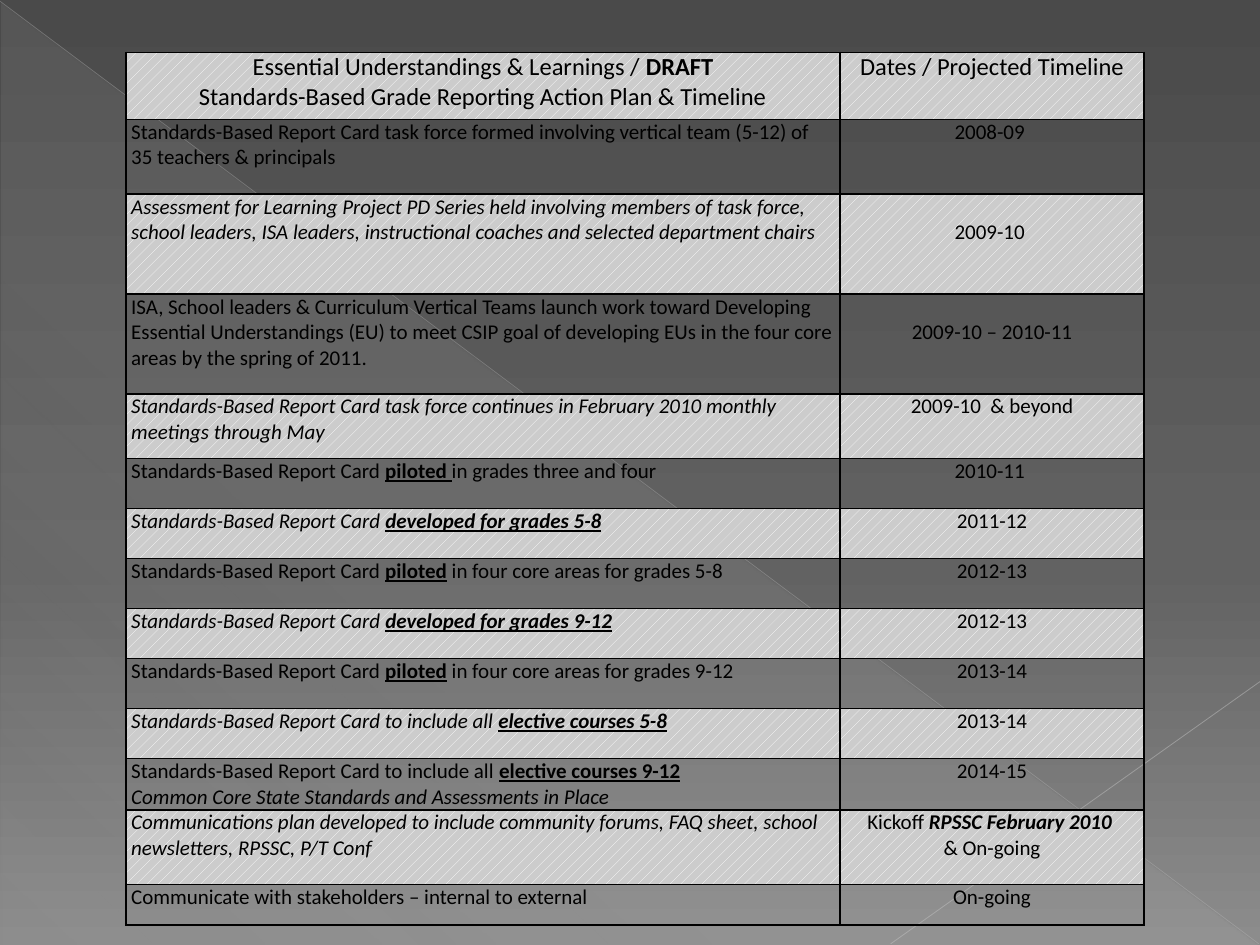
import pptx
import pptx.util
import pptx.dml.color
import pptx.enum.dml
import pptx.enum.shapes
import pptx.enum.text
import pptx.oxml
import pptx.oxml.ns
from lxml import etree

Pt = pptx.util.Pt
RGB = pptx.dml.color.RGBColor.from_string
qn = pptx.oxml.ns.qn

COLORS = {
    "ink": "000000", "hatch": "FFFFFF", "shade": "CCCCCC",
    "sky": "4A4A4A", "middle": "626262", "ground": "8C8C8C",
    "veil": "D2D2D2", "long line": "BFBFBF", "short line": "C6C6C6",
}
FONT = "Calibri"
PLAIN, UNDERLINED, SLANTED = {}, {"underline": True}, {"italic": True}

# Each row: height, paragraphs on the left, paragraphs on the right.
# Words between asterisks are emphasised.
CARD = "Standards-Based Report Card "
ROWS = [
    (38.2, ["Essential Understandings & Learnings / *DRAFT*",
            "Standards-Based Grade Reporting Action Plan & Timeline"],
     ["Dates / Projected Timeline"]),
    (42.8, [CARD + "task force formed involving vertical team (5-12) of 35 teachers & principals"],
     ["2008-09 "]),
    (57.1, ["Assessment for Learning Project PD Series held involving members of task force, "
            "school leaders, ISA leaders, instructional coaches and selected department chairs"],
     ["2009-10 "]),
    (57.1, ["ISA, School leaders & Curriculum Vertical Teams launch work toward Developing "
            "Essential Understandings (EU) to meet CSIP goal of developing EUs in the four "
            "core areas by the spring of 2011."],
     ["2009-10 – 2010-11"]),
    (36.9, [CARD + "task force continues in February 2010 monthly meetings through May"],
     ["2009-10  & beyond"]),
    (28.6, [CARD + "*piloted *in grades three and four"], ["2010-11 "]),
    (28.6, [CARD + "*developed for grades 5-8*"], ["2011-12"]),
    (28.6, [CARD + "*piloted* in four core areas for grades 5-8"], ["2012-13"]),
    (28.6, [CARD + "*developed for grades 9-12*"], ["2012-13"]),
    (28.6, [CARD + "*piloted* in four core areas for grades 9-12"], ["2013-14"]),
    (28.6, [CARD + "to include all *elective courses 5-8*"], ["2013-14"]),
    (28.6, [CARD + "to include all *elective courses 9-12*",
            "Common Core State Standards and Assessments in Place"], ["2014-15"]),
    (42.8, ["Communications plan developed to include community forums, FAQ sheet, "
            "school newsletters, RPSSC, P/T Conf"],
     ["Kickoff *RPSSC February 2010 *", "& On-going"]),
    (23, ["Communicate with stakeholders – internal to external"], ["On-going"]),
]
LOWERED_DATES = (2, 3)      # rows whose date sits one line down
MIXED_ROW = 11              # upright row whose second paragraph is italic


def set_gradient(fill, owner, stops, angle):
    """Give a fill linear stops of (position, colour, opacity)."""
    fill.gradient()
    gradient = owner.find(".//" + qn("a:gradFill"))
    for child in list(gradient):
        gradient.remove(child)
    stop_list = etree.SubElement(gradient, qn("a:gsLst"))
    for position, color, opacity in stops:
        stop = etree.SubElement(stop_list, qn("a:gs"), pos=str(position * 1000))
        add_alpha(etree.SubElement(stop, qn("a:srgbClr"), val=COLORS[color]), opacity)
    etree.SubElement(gradient, qn("a:lin"), ang=str(angle * 60000), scaled="0")


def add_alpha(color_element, opacity):
    if opacity < 100:
        etree.SubElement(color_element, qn("a:alpha"), val=str(opacity * 1000))


def add_faint_line(page, start, end, color, width, opacity):
    line = page.shapes.add_connector(
        pptx.enum.shapes.MSO_CONNECTOR.STRAIGHT, *map(Pt, start + end))
    line.line.width = Pt(width)
    line.line.color.rgb = RGB(COLORS[color])
    properties = line.element.spPr
    add_alpha(properties.find(".//" + qn("a:srgbClr")), opacity)
    etree.SubElement(properties, qn("a:effectLst"))


def add_backdrop(page, width, height):
    set_gradient(page.background.fill, page.element,
                 [(0, "sky", 100), (60, "middle", 100), (100, "ground", 100)], 90)
    veil = page.shapes.add_shape(
        pptx.enum.shapes.MSO_SHAPE.RIGHT_TRIANGLE,
        Pt(0.7), Pt(1.4), Pt(width - 1.4), Pt(height - 1.4))
    veil.shadow.inherit = False
    veil.line.fill.background()
    set_gradient(veil.fill, veil.element.spPr,
                 [(0, "veil", 10), (70, "veil", 8), (100, "veil", 1)], 133)
    add_faint_line(page, (0, 0.7), (width - 0.7, height - 0.7), "long line", 0.39, 35)
    add_faint_line(page, (width, 389.5), (509, height - 0.7), "short line", 0.47, 45)


def add_borders(cell):
    properties = cell._tc.get_or_add_tcPr()
    for index, side in enumerate(("a:lnL", "a:lnR", "a:lnT", "a:lnB")):
        border = etree.Element(qn(side), w=str(Pt(1)))
        fill = etree.SubElement(border, qn("a:solidFill"))
        etree.SubElement(fill, qn("a:srgbClr"), val=COLORS["ink"])
        properties.insert(index, border)


def fill_cell(cell, shaded):
    if shaded:
        cell.fill.patterned()
        cell.fill.pattern = pptx.enum.dml.MSO_PATTERN.PERCENT_20
        cell.fill.fore_color.rgb = RGB(COLORS["hatch"])
        cell.fill.back_color.rgb = RGB(COLORS["shade"])
    else:
        cell.fill.background()


def write_cell(cell, texts, size, centered, italics, emphasis):
    cell.margin_left = cell.margin_right = Pt(3)
    cell.margin_top = cell.margin_bottom = 0
    for index, text in enumerate(texts):
        para = cell.text_frame.paragraphs[0] if index == 0 else cell.text_frame.add_paragraph()
        if centered:
            para.alignment = pptx.enum.text.PP_ALIGN.CENTER
        para.font.name = FONT
        para.font.size = Pt(size)
        para.font.color.rgb = RGB(COLORS["ink"])
        para.font.italic = italics[index]
        for number, piece in enumerate(text.split("*")):
            if not piece:
                continue
            span = para.add_run()
            span.text = piece
            if number % 2:
                span.font.bold = True
                for name, value in emphasis.items():
                    setattr(span.font, name, value)


def add_timeline(page, left, top, widths):
    height = sum(row[0] for row in ROWS)
    table = page.shapes.add_table(
        len(ROWS), len(widths), Pt(left), Pt(top), Pt(sum(widths)), Pt(height)).table
    table.first_row = table.horz_banding = False
    for column, width in zip(table.columns, widths):
        column.width = Pt(width)
    for index, (row_height, plan, dates) in enumerate(ROWS):
        table.rows[index].height = Pt(row_height)
        header, shaded = index == 0, index % 2 == 0
        size = 14 if header else 12
        italics = [shaded and not header, index == MIXED_ROW]
        plan_cell, date_cell = table.cell(index, 0), table.cell(index, 1)
        write_cell(plan_cell, plan, size, header, italics, PLAIN if header else UNDERLINED)
        write_cell(date_cell, dates, size, True, [False, False], SLANTED)
        if index in LOWERED_DATES:
            date_cell.margin_top = Pt(14.6)
        for cell in (plan_cell, date_cell):
            fill_cell(cell, shaded)
            add_borders(cell)


def main():
    deck = pptx.Presentation()
    width, height = 720, 540
    deck.slide_width, deck.slide_height = Pt(width), Pt(height)
    page = deck.slides.add_slide(deck.slide_layouts[6])
    add_backdrop(page, width, height)
    add_timeline(page, 72, 30, (408, 173.8))
    deck.save("out.pptx")


if __name__ == "__main__":
    main()
